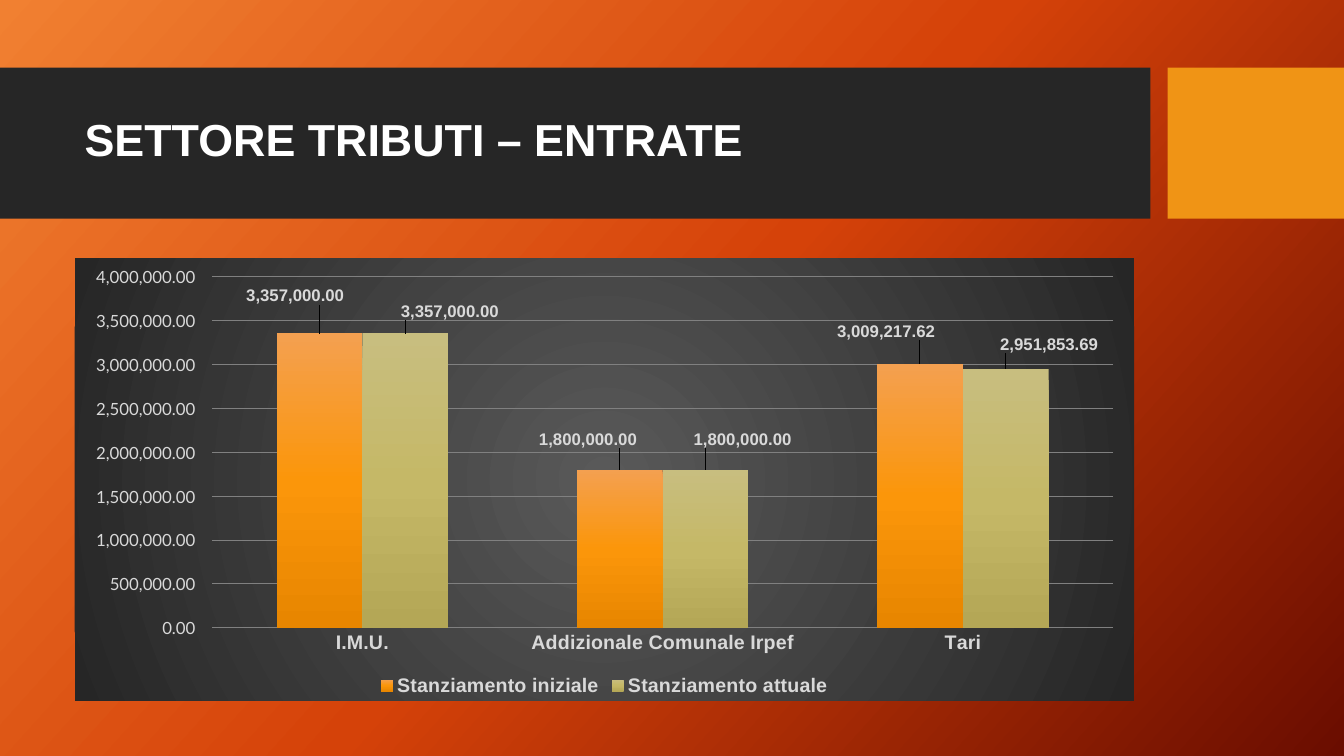
"""Builds the tax revenue slide with a clustered column chart."""
from lxml.etree import SubElement
from pptx import Presentation
from pptx.chart.data import CategoryChartData
from pptx.dml.color import RGBColor
from pptx.enum.chart import XL_CHART_TYPE as ChartType
from pptx.enum.chart import XL_LABEL_POSITION as LabelPosition
from pptx.enum.chart import XL_LEGEND_POSITION as LegendPosition
from pptx.enum.chart import XL_TICK_MARK as TickMark
from pptx.enum.shapes import MSO_SHAPE as Shape
from pptx.enum.text import MSO_ANCHOR as Anchor
from pptx.oxml import parse_xml
from pptx.oxml.ns import nsdecls, qn
from pptx.util import Inches, Pt

TITLE = "SETTORE TRIBUTI – ENTRATE"
CATEGORIES = ["I.M.U.", "Addizionale Comunale Irpef", "Tari"]
SERIES = [
    {
        "name": "Stanziamento iniziale",
        "values": [3357000, 1800000, 3009217.62],
        "stops": [(0, "F4A050"), (50, "FB960A"), (100, "E88600")],
        "label_shifts": [(-0.023, -0.055), (-0.03, -0.04), (-0.032, -0.043)],
    },
    {
        "name": "Stanziamento attuale",
        "values": [3357000, 1800000, 2951853.69],
        "stops": [(0, "C8BE7F"), (50, "C5B867"), (100, "B4A756")],
        "label_shifts": [(0.042, -0.02), (0.035, -0.04), (0.041, -0.025)],
    },
]
PAGE_STOPS = [(0, "F18031"), (50, "D54209"), (100, "6A0D00")]
CHART_STOPS = [(0, "595959"), (100, "262626")]
PLOT_AREA = {"x": 0.13, "y": 0.043, "w": 0.85, "h": 0.793}
NUMBER_FORMAT = "#,##0.00"
AXIS_FORMAT = "#,##0.00\\ _€"

DARK = RGBColor(0x26, 0x26, 0x26)
ORANGE = RGBColor(0xF0, 0x94, 0x15)
WHITE = RGBColor(0xFF, 0xFF, 0xFF)
LIGHT = RGBColor(0xD9, 0xD9, 0xD9)
GRAY = RGBColor(0x80, 0x80, 0x80)

BANDS = [(0, 11.41, DARK), (11.58, 1.75, ORANGE)]
BAND_TOP, BAND_HEIGHT = 0.67, 1.5
LEFT, WIDTH = 0.74, 10.51


def gradient(stops, angle=None):
    marks = "".join(
        f'<a:gs pos="{place * 1000}"><a:srgbClr val="{color}"/></a:gs>'
        for place, color in stops
    )
    if angle is None:
        shade = (
            '<a:path path="circle"><a:fillToRect l="50000" t="50000" '
            'r="50000" b="50000"/></a:path>'
        )
    else:
        shade = f'<a:lin ang="{angle * 60000}" scaled="0"/>'
    return parse_xml(
        f'<a:gradFill {nsdecls("a")} rotWithShape="1">'
        f"<a:gsLst>{marks}</a:gsLst>{shade}</a:gradFill>"
    )


def paint(fill, holder, stops, angle):
    fill.solid()
    solid = next(holder.iter(qn("a:solidFill")))
    solid.getparent().replace(solid, gradient(stops, angle))


def manual_layout(settings):
    layout = parse_xml(f'<c:layout {nsdecls("c")}/>')
    manual = SubElement(layout, qn("c:manualLayout"))
    for name, value in settings.items():
        SubElement(manual, qn(f"c:{name}")).set("val", str(value))
    return layout


def style(font, size, color=LIGHT, bold=True, name="Arial"):
    font.size, font.bold, font.name = Pt(size), bold, name
    font.color.rgb = color


def add_bands(page):
    for left, width, color in BANDS:
        band = page.shapes.add_shape(
            Shape.RECTANGLE, Inches(left), Inches(BAND_TOP),
            Inches(width), Inches(BAND_HEIGHT),
        )
        band.shadow.inherit = False
        band.fill.solid()
        band.fill.fore_color.rgb = color
        band.line.fill.background()


def add_title(page):
    box = page.shapes.add_textbox(
        Inches(LEFT), Inches(0.82), Inches(WIDTH), Inches(1.18)
    )
    frame = box.text_frame
    frame.word_wrap = True
    frame.vertical_anchor = Anchor.MIDDLE
    para = frame.paragraphs[0]
    para.text = TITLE
    para.line_spacing = 0.9
    style(para.font, 32, WHITE)


def style_axes(chart):
    for axis in (chart.category_axis, chart.value_axis):
        axis.major_tick_mark = axis.minor_tick_mark = TickMark.NONE
        axis.format.line.fill.background()
    style(chart.category_axis.tick_labels.font, 14)
    values = chart.value_axis
    values.minimum_scale, values.maximum_scale = 0, 4000000
    values.major_unit = 500000
    values.major_gridlines.format.line.color.rgb = GRAY
    values.major_gridlines.format.line.width = Pt(0.75)
    labels = values.tick_labels
    style(labels.font, 12, bold=False, name="Lato")
    labels.number_format = AXIS_FORMAT
    labels.number_format_is_linked = False


def style_series(series, content):
    paint(series.format.fill, series._element, content["stops"], 90)
    labels = series.data_labels
    labels.show_value = True
    labels.number_format = NUMBER_FORMAT
    labels.number_format_is_linked = False
    labels.position = LabelPosition.OUTSIDE_END
    style(labels.font, 12)
    for index, (across, down) in enumerate(content["label_shifts"]):
        label = series.points[index].data_label
        style(label.font, 12)
        label.position = LabelPosition.OUTSIDE_END
        mark = labels._element.findall(qn("c:dLbl"))[index]
        mark.find(qn("c:idx")).addnext(manual_layout({"x": across, "y": down}))


def add_chart(page):
    data = CategoryChartData(number_format=NUMBER_FORMAT)
    data.categories = CATEGORIES
    for content in SERIES:
        data.add_series(content["name"], content["values"])
    chart = page.shapes.add_chart(
        ChartType.COLUMN_CLUSTERED, Inches(LEFT), Inches(2.56),
        Inches(WIDTH), Inches(4.39), data,
    ).chart
    style(chart.font, 10, WHITE, False, "Lato")
    chart.has_title = False
    chart.has_legend = True
    chart.legend.position = LegendPosition.BOTTOM
    chart.legend.include_in_layout = False
    style(chart.legend.font, 14)
    plot = chart.plots[0]
    plot.gap_width, plot.overlap = 150, 0
    plot.vary_by_categories = False
    style_axes(chart)
    for series, content in zip(plot.series, SERIES):
        style_series(series, content)

    space = chart._chartSpace
    area = next(space.iter(qn("c:plotArea")))
    for layout in area.findall(qn("c:layout")):
        area.remove(layout)
    area.insert(0, manual_layout(
        {"layoutTarget": "inner", "xMode": "edge", "yMode": "edge", **PLOT_AREA}
    ))
    backdrop = parse_xml(f'<c:spPr {nsdecls("c", "a")}><a:ln><a:noFill/></a:ln></c:spPr>')
    backdrop.insert(0, gradient(CHART_STOPS))
    space.find(qn("c:chart")).addnext(backdrop)


def main():
    deck = Presentation()
    deck.slide_width, deck.slide_height = Inches(13.33), Inches(7.5)
    page = deck.slides.add_slide(deck.slide_layouts[6])
    paint(page.background.fill, page.element, PAGE_STOPS, 42)
    add_bands(page)
    add_title(page)
    add_chart(page)
    deck.save("out.pptx")


if __name__ == "__main__":
    main()
